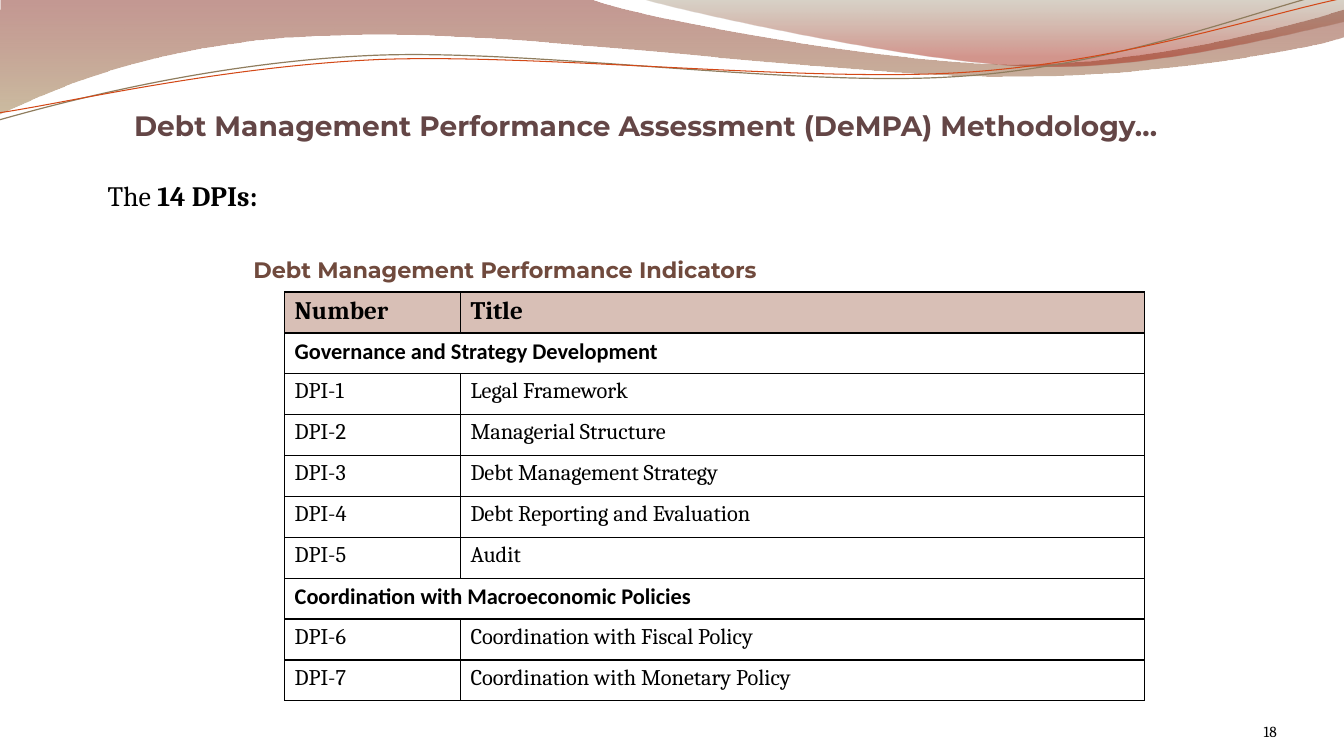
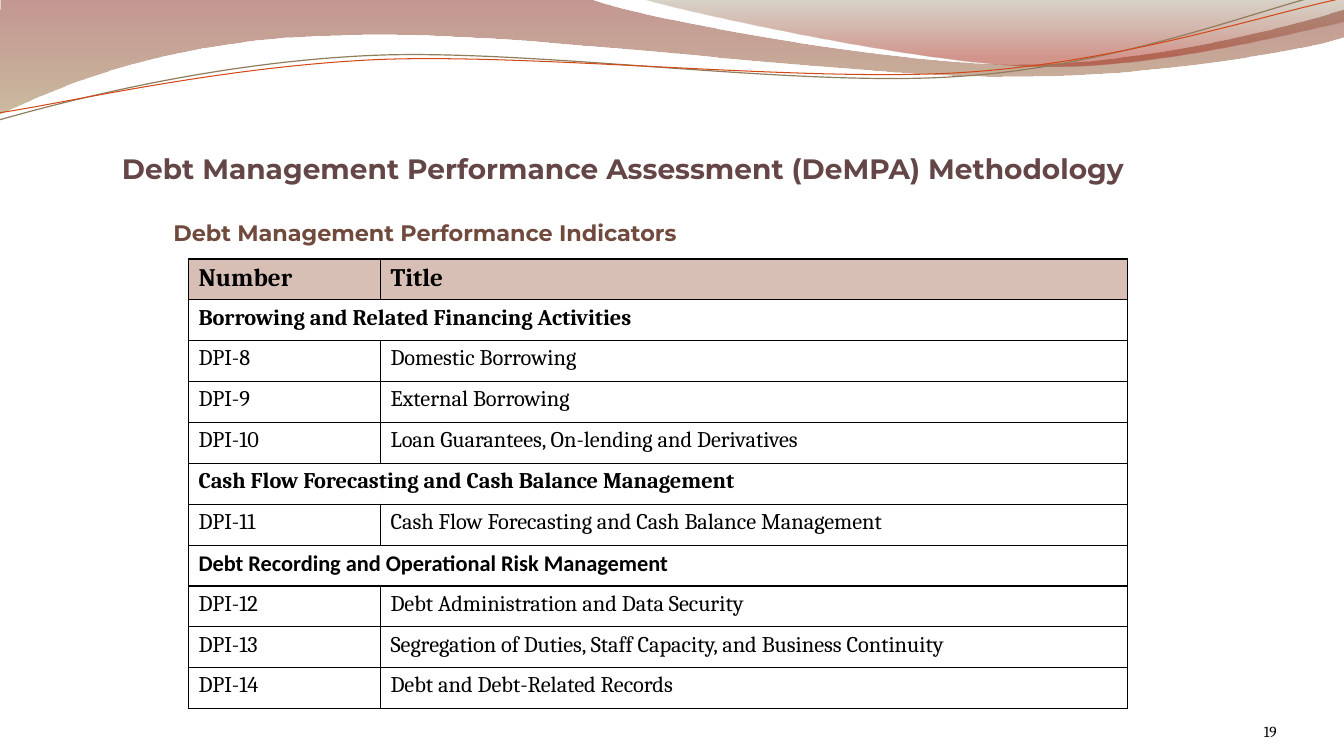
"""Build two slides that list the debt management performance indicators."""
from dataclasses import dataclass
from itertools import count
from math import cos, radians, sin

from lxml.etree import SubElement
from pptx import Presentation
from pptx.dml.color import RGBColor as Rgb
from pptx.enum.text import MSO_ANCHOR as Anchor, PP_ALIGN as Align
from pptx.oxml import parse_xml
from pptx.oxml.ns import nsdecls, qn
from pptx.util import Pt


@dataclass(frozen=True)
class Theme:
    heading: str = "Montserrat"
    body: str = "Cambria"
    plain: str = "Calibri"
    title: str = "644646"
    caption: str = "704A3D"
    ink: str = "000000"
    header: str = "D8BFB6"
    tan: str = "8F7D5E"
    orange: str = "D34817"
    large: float = 20
    medium: float = 18
    normal: float = 16
    small: float = 11


T = Theme()


@dataclass(frozen=True)
class Box:
    x: float
    y: float
    w: float
    h: float


@dataclass(frozen=True)
class Stop:
    position: float
    color: str
    alpha: int


@dataclass(frozen=True)
class Wave:
    box: Box
    start: tuple
    segments: tuple
    stops: tuple = ()
    color: str = ""
    weight: float = 0
    angle: float = 0


@dataclass(frozen=True)
class Style:
    font: str
    size: float
    color: str = T.ink
    bold: bool = False


@dataclass(frozen=True)
class Para:
    runs: tuple
    align: Align = Align.LEFT
    indent: float = 0
    before: float = 0


@dataclass(frozen=True)
class Section:
    name: str
    font: str
    indicators: tuple


@dataclass(frozen=True)
class Page:
    number: int
    title: str
    title_box: Box
    body_box: Box
    body_insets: tuple
    body: tuple
    table_at: tuple
    columns: tuple
    first: int
    sections: tuple


TITLE = Style(T.heading, T.large, T.title, True)
CAPTION = Style(T.heading, T.normal, T.caption, True)
LEAD = Style(T.body, T.large)
LEAD_BOLD = Style(T.body, T.large, bold=True)
HEADER = Style(T.body, T.medium, bold=True)
CELL = Style(T.body, T.normal)
FOOTER = Style(T.body, T.small)
FOOTER_BOX = Box(832.3, 500.4, 79.7, 28.8)
ROW_HEIGHT = 29.2
CAPTION_RUNS = (("Debt Management Performance Indicators", CAPTION),)

WAVES = (
    Wave(Box(-1.4, -0.4, 962, 82), (0, 0), (
        (422.6, -0.4),
        (456.5, 12.6, 636.5, 45.8, 727.9, 45.8),
        (818.6, 45.8, 919.4, 19.1, 960, 6.9),
        (960.5, 26.3),
        (943.9, 32.1, 834.5, 55.1, 715.7, 54.4),
        (596.9, 54.4, 366.5, 20.6, 247, 24.9),
        (123.8, 26.3, 43.9, 60.2, -1.4, 81.6),
        (0, 0),
    ), stops=(Stop(0, "7C1A0E", 45), Stop(1, "A18552", 55))),
    Wave(Box(459.4, -0.4, 500, 50.4), (459.4, -0.4), (
        (488.9, 8.3, 654.5, 45, 738, 47.2),
        (820.8, 50, 923, 23.4, 960, 15.5),
        (960, 0),
        (459.4, -0.4),
    ), stops=(Stop(0, "7E6B48", 30), Stop(0.8, "9F1705", 45))),
    Wave(Box(-2.2, 15.8, 962, 51.1), (-0.7, 85.7), (
        (45.4, 72.7, 151.2, 44.6, 265.7, 39.6),
        (379.4, 34.6, 568.1, 62.6, 683.3, 54.7),
        (799.2, 47.5, 900.7, 5.8, 957.6, -7.2),
    ), color=T.tan, weight=0.85, angle=-2.7),
    Wave(Box(-1.4, 21.6, 963.4, 41.8), (-0.7, 80.6), (
        (44.6, 74.2, 157, 47.5, 271.4, 42.5),
        (386.6, 38.2, 573.1, 59, 687.6, 51.8),
        (802.1, 44.6, 903.6, 10.1, 960, -1.4),
    ), color=T.orange, weight=0.75, angle=-2.7),
)

PAGES = (
    Page(
        18, "Debt Management Performance Assessment (DeMPA) Methodology…",
        Box(95.8, 41.8, 864, 59.8), Box(69.8, 123.8, 864, 416.2), (7.2, 3.6),
        (Para((("The ", LEAD), ("14 DPIs:", LEAD_BOLD))),
         Para(CAPTION_RUNS, Align.JUSTIFY, 104.2, 31.4)),
        (203.3, 208.6), (125.6, 488.6), 1,
        (
            Section("Governance and Strategy Development", T.plain, (
                "Legal Framework", "Managerial Structure",
                "Debt Management Strategy",
                "Debt Reporting and Evaluation", "Audit")),
            Section("Coordination with Macroeconomic Policies", T.plain, (
                "Coordination with Fiscal Policy",
                "Coordination with Monetary Policy")),
        ),
    ),
    Page(
        19, "Debt Management Performance Assessment (DeMPA) Methodology",
        Box(87.1, 71, 864, 61.2), Box(55.4, 132.5, 864, 396), (7.2, 28.5),
        (Para(CAPTION_RUNS, Align.JUSTIFY, 61.4),),
        (134.6, 185), (137.2, 533.4), 8,
        (
            Section("Borrowing and Related Financing Activities", T.body, (
                "Domestic Borrowing", "External Borrowing",
                "Loan Guarantees, On-lending and Derivatives")),
            Section("Cash Flow Forecasting and Cash Balance Management", T.body, (
                "Cash Flow Forecasting and Cash Balance Management",)),
            Section("Debt Recording and Operational Risk Management", T.plain, (
                "Debt Administration and Data Security",
                "Segregation of Duties, Staff Capacity, and Business Continuity",
                "Debt and Debt-Related Records")),
        ),
    ),
)


def to_local(wave: Wave, x: float, y: float) -> tuple:
    box, turn = wave.box, radians(-wave.angle)
    dx, dy = x - box.x - box.w / 2, y - box.y - box.h / 2
    return (Pt(dx * cos(turn) - dy * sin(turn) + box.w / 2),
            Pt(dx * sin(turn) + dy * cos(turn) + box.h / 2))


def draw_wave(s, wave: Wave) -> None:
    box = wave.box
    builder = s.shapes.build_freeform(*map(Pt, wave.start))
    builder.add_line_segments(
        [tuple(map(Pt, seg[-2:])) for seg in wave.segments],
        close=bool(wave.stops))
    sp = builder.convert_to_shape()
    sp.left, sp.top, sp.width, sp.height = map(Pt, (box.x, box.y, box.w, box.h))
    sp.rotation = wave.angle
    sp.shadow.inherit = False
    outline = sp._element.spPr.find(".//" + qn("a:path"))
    outline.set("w", str(sp.width))
    outline.set("h", str(sp.height))
    for node, seg in zip(list(outline), (wave.start, *wave.segments)):
        if len(seg) == 6:
            node.tag = qn("a:cubicBezTo")
        for pt in list(node):
            node.remove(pt)
        for x, y in zip(seg[::2], seg[1::2]):
            px, py = to_local(wave, x, y)
            SubElement(node, qn("a:pt"), x=str(px), y=str(py))
    if not wave.stops:
        sp.fill.background()
        sp.line.color.rgb = Rgb.from_string(wave.color)
        sp.line.width = Pt(wave.weight)
        return
    sp.line.fill.background()
    sp.fill.gradient()
    sp.fill.gradient_angle = 270
    for gs, stop in zip(sp.fill.gradient_stops, wave.stops):
        gs.position = stop.position
        gs.color.rgb = Rgb.from_string(stop.color)
    colors = sp._element.spPr.findall(".//" + qn("a:gs") + "/" + qn("a:srgbClr"))
    for color, stop in zip(colors, wave.stops):
        SubElement(color, qn("a:alpha"), val=str(stop.alpha * 1000))


def add_run(p, text: str, style: Style) -> None:
    r = p.add_run()
    r.text = text
    r.font.name = style.font
    r.font.size = Pt(style.size)
    r.font.bold = style.bold
    r.font.color.rgb = Rgb.from_string(style.color)


def add_text(s, box: Box, *paras: Para, insets: tuple = (0, 0),
             anchor: Anchor = Anchor.BOTTOM) -> None:
    sp = s.shapes.add_textbox(Pt(box.x), Pt(box.y), Pt(box.w), Pt(box.h))
    tf = sp.text_frame
    tf.word_wrap = True
    tf.vertical_anchor = anchor
    tf.margin_left = tf.margin_right = Pt(insets[0])
    tf.margin_top, tf.margin_bottom = Pt(insets[1]), 0
    for i, para in enumerate(paras):
        p = tf.add_paragraph() if i else tf.paragraphs[0]
        p.alignment = para.align
        p.space_before = Pt(para.before)
        p._p.get_or_add_pPr().set("marL", str(Pt(para.indent)))
        for text, style in para.runs:
            add_run(p, text, style)


def set_cell(cell, text: str, style: Style, fill: str = "") -> None:
    if fill:
        cell.fill.solid()
        cell.fill.fore_color.rgb = Rgb.from_string(fill)
    else:
        cell.fill.background()
    tc_pr = cell._tc.get_or_add_tcPr()
    for i, side in enumerate("LRTB"):
        tc_pr.insert(i, parse_xml(
            f'<a:ln{side} {nsdecls("a")} w="{Pt(1)}"><a:solidFill>'
            f'<a:srgbClr val="{T.ink}"/></a:solidFill></a:ln{side}>'))
    if text:
        add_run(cell.text_frame.paragraphs[0], text, style)


def add_indicators(s, page: Page) -> None:
    numbers = count(page.first)
    rows = [("Number", "Title", HEADER, T.header)]
    for section in page.sections:
        rows.append((section.name, "", Style(section.font, T.normal, bold=True), ""))
        rows += [(f"DPI-{next(numbers)}", name, CELL, "")
                 for name in section.indicators]
    x, y = page.table_at
    table = s.shapes.add_table(
        len(rows), len(page.columns), Pt(x), Pt(y),
        Pt(sum(page.columns)), Pt(ROW_HEIGHT * len(rows))).table
    table.first_row = table.horz_banding = False
    for column, width in zip(table.columns, page.columns):
        column.width = Pt(width)
    for i, (left, right, style, fill) in enumerate(rows):
        table.rows[i].height = Pt(ROW_HEIGHT)
        set_cell(table.cell(i, 0), left, style, fill)
        set_cell(table.cell(i, 1), right, style, fill)
        if not right:
            table.cell(i, 0).merge(table.cell(i, 1))


def add_page(prs, page: Page) -> None:
    s = prs.slides.add_slide(prs.slide_layouts[6])
    for wave in WAVES:
        draw_wave(s, wave)
    add_text(s, page.title_box, Para(((page.title, TITLE),)))
    add_text(s, page.body_box, *page.body, insets=page.body_insets, anchor=Anchor.TOP)
    add_indicators(s, page)
    add_text(s, FOOTER_BOX, Para(((str(page.number), FOOTER),), Align.RIGHT))


def main() -> None:
    prs = Presentation()
    prs.slide_width, prs.slide_height = Pt(960), Pt(540)
    for page in PAGES:
        add_page(prs, page)
    prs.save("out.pptx")


if __name__ == "__main__":
    main()
